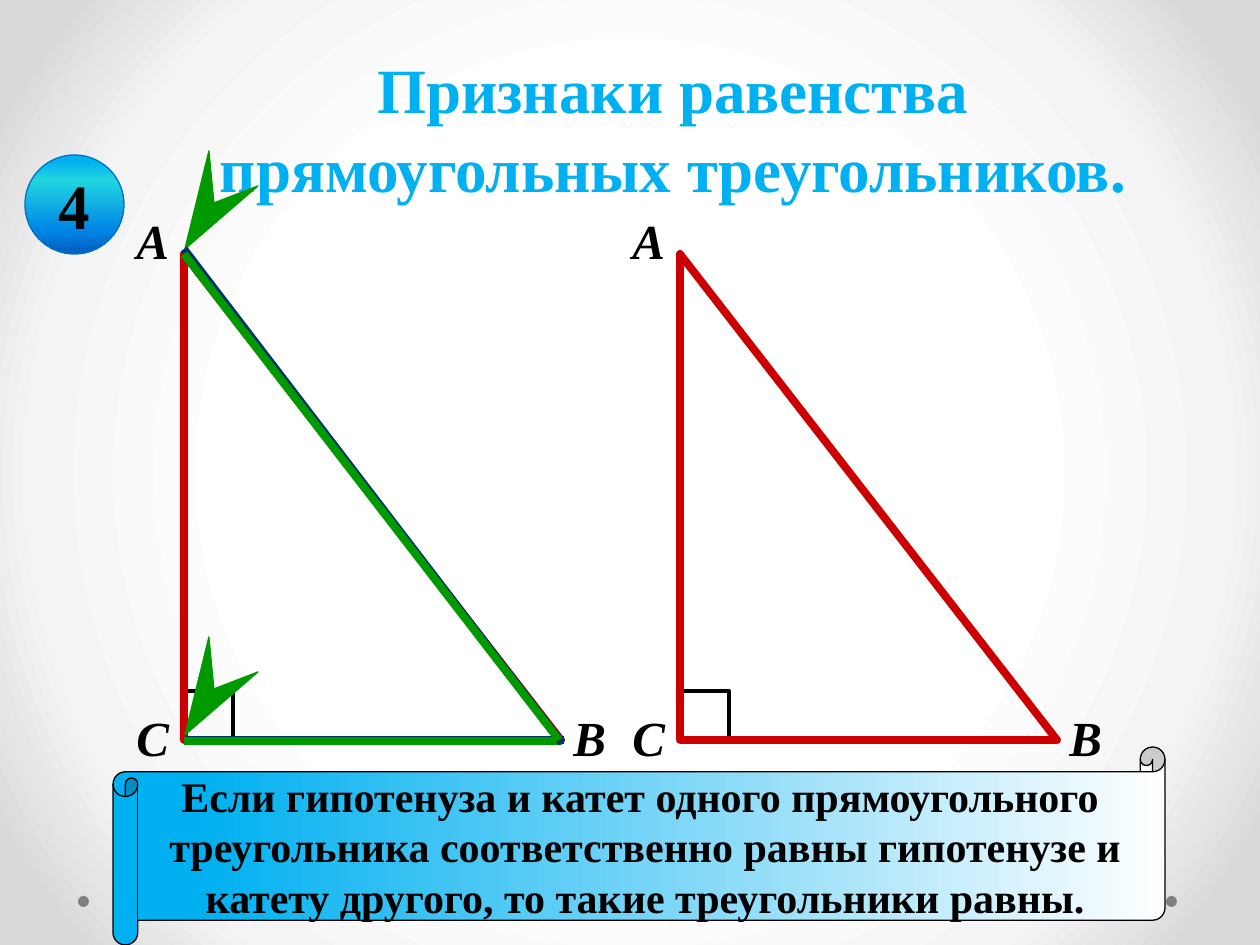
from dataclasses import dataclass
from typing import NamedTuple

from lxml.etree import SubElement
from pptx import Presentation
from pptx.dml.color import RGBColor
from pptx.enum.shapes import MSO_CONNECTOR, MSO_SHAPE as Preset
from pptx.enum.text import MSO_ANCHOR as Anchor, MSO_AUTO_SIZE as AutoSize, PP_ALIGN as Align
from pptx.oxml.ns import qn
from pptx.util import Emu, Pt

EMU_PER_PX = 914400 / 126


@dataclass(frozen=True)
class Theme:
    font: str = "Times New Roman"
    ink: str = "000000"
    title: str = "00B0F0"
    triangle: str = "CC0000"
    equal: str = "009900"
    under: str = "003366"
    badge_edge: str = "0070C0"
    dot: str = "808080"
    backdrop: tuple = ((50, "FFFFFF"), (76, "F4F4F4"), (92, "DADADA"))
    badge: tuple = ((6, "00B0F0"), (25, "21D6E0"), (75, "0087E6"), (100, "005CBF"))
    scroll: tuple = ((8, "00B0F0"), (100, "FFFFFF"))
    heading_size: int = 36
    label_size: int = 28
    rule_size: int = 24
    thin: float = 0.75
    corner: float = 2.5
    thick: float = 4.5


class Box(NamedTuple):
    left: int
    top: int
    width: int
    height: int


class Segment(NamedTuple):
    start: tuple[int, int]
    end: tuple[int, int]
    color: str


THEME = Theme()
SLIDE = Box(0, 0, 1260, 945)
TITLE = Box(147, 40, 1052, 110)
BADGE = Box(25, 155, 99, 99)
SCROLL = Box(113, 747, 1052, 198)
DOTS = [Box(left, 896, 11, 11) for left in (1166, 78)]
TRIANGLE_LEFTS = (184, 680)
TRIANGLE_TOP, TRIANGLE_WIDTH, TRIANGLE_HEIGHT = 254, 377, 486
CORNER_SIDE = 49
LABEL_OFFSETS = {"А": (-60, -50), "В": (377, 447), "С": (-60, 447)}
ARROW_TIPS = ((185, 249), (185, 735))
ARROW_OFFSETS = ((24, -98), (29, -46), (73, -63))
EQUAL_SIDES = (
    Segment((186, 740), (564, 740), THEME.under),
    Segment((184, 741), (562, 741), THEME.equal),
    Segment((562, 743), (184, 249), THEME.under),
    Segment((559, 740), (184, 254), THEME.equal),
)
TITLE_LINES = ("Признаки равенства", "прямоугольных треугольников.")
RULE_LINES = (
    "Если гипотенуза и катет одного прямоугольного ",
    "треугольника соответственно равны гипотенузе и",
    "катету другого, то такие треугольники равны.",
)


def px(value: float) -> Emu:
    return Emu(round(value * EMU_PER_PX))


def place(box: Box) -> list[Emu]:
    return [px(value) for value in box]


def rgb(color: str) -> RGBColor:
    return RGBColor.from_string(color)


def assign(target, values: dict) -> None:
    for name, value in values.items():
        setattr(target, name, value)


def set_gradient(fill, owner, stops: tuple, angle: int | None) -> None:
    """Write the stops into owner's gradient; without an angle it is circular."""
    fill.gradient()
    gradient = next(owner.iter(qn("a:gradFill")))
    for child in list(gradient):
        gradient.remove(child)
    stop_list = SubElement(gradient, qn("a:gsLst"))
    for percent, color in stops:
        stop = SubElement(stop_list, qn("a:gs"), pos=str(percent * 1000))
        SubElement(stop, qn("a:srgbClr"), val=color)
    if angle is None:
        circle = SubElement(gradient, qn("a:path"), path="circle")
        SubElement(circle, qn("a:fillToRect"), dict.fromkeys("ltrb", "50000"))
    else:
        SubElement(gradient, qn("a:lin"), ang=str(angle * 60000), scaled="0")


def write(frame, lines, size: int, color: str = THEME.ink, italic: bool = False,
          align=Align.CENTER, anchor=Anchor.MIDDLE, spacing: float = 1.0) -> None:
    assign(frame, {"word_wrap": False, "auto_size": AutoSize.NONE, "vertical_anchor": anchor})
    for index, line in enumerate(lines):
        paragraph = frame.add_paragraph() if index else frame.paragraphs[0]
        assign(paragraph, {"alignment": align, "line_spacing": spacing})
        run = paragraph.add_run()
        run.text = line
        assign(run.font, {"name": THEME.font, "size": Pt(size), "bold": True, "italic": italic})
        run.font.color.rgb = rgb(color)


def paint(shape, fill: str | None, line: str | None, width: float = THEME.thin) -> None:
    shape.shadow.inherit = False
    if fill:
        shape.fill.solid()
        shape.fill.fore_color.rgb = rgb(fill)
    else:
        shape.fill.background()
    if line:
        shape.line.color.rgb = rgb(line)
        shape.line.width = Pt(width)
    else:
        shape.line.fill.background()


def add_preset(slide, preset, box: Box, fill: str | None, line: str | None,
               width: float = THEME.thin):
    shape = slide.shapes.add_shape(preset, *place(box))
    paint(shape, fill, line, width)
    return shape


def add_triangle(slide, left: int) -> None:
    bottom = TRIANGLE_TOP + TRIANGLE_HEIGHT
    add_preset(slide, Preset.RECTANGLE,
               Box(left, bottom - CORNER_SIDE, CORNER_SIDE, CORNER_SIDE),
               None, THEME.ink, THEME.corner)
    add_preset(slide, Preset.RIGHT_TRIANGLE,
               Box(left, TRIANGLE_TOP, TRIANGLE_WIDTH, TRIANGLE_HEIGHT),
               None, THEME.triangle, THEME.thick)
    for vertex, (dx, dy) in LABEL_OFFSETS.items():
        label = slide.shapes.add_textbox(*place(Box(left + dx, TRIANGLE_TOP + dy, 58, 72)))
        write(label.text_frame, [vertex], THEME.label_size, italic=True,
              align=Align.LEFT, anchor=Anchor.TOP)


def add_arrow(slide, tip: tuple[int, int]) -> None:
    builder = slide.shapes.build_freeform(*tip, scale=EMU_PER_PX)
    builder.add_line_segments([(tip[0] + dx, tip[1] + dy) for dx, dy in ARROW_OFFSETS])
    paint(builder.convert_to_shape(), THEME.equal, THEME.equal)


def add_side(slide, side: Segment) -> None:
    ends = [px(value) for value in (*side.start, *side.end)]
    connector = slide.shapes.add_connector(MSO_CONNECTOR.STRAIGHT, *ends)
    connector.line.color.rgb = rgb(side.color)
    connector.line.width = Pt(THEME.thick)
    SubElement(connector.element.spPr, qn("a:effectLst"))


def add_panel(slide, preset, box: Box, stops: tuple, angle: int, edge: str, lines, size: int) -> None:
    panel = add_preset(slide, preset, box, None, edge)
    set_gradient(panel.fill, panel.element, stops, angle)
    write(panel.text_frame, lines, size)


def main() -> None:
    deck = Presentation()
    assign(deck, {"slide_width": px(SLIDE.width), "slide_height": px(SLIDE.height)})
    slide = deck.slides.add_slide(deck.slide_layouts[5])
    set_gradient(slide.background.fill, slide.element, THEME.backdrop, None)
    for dot in DOTS:
        add_preset(slide, Preset.OVAL, dot, THEME.dot, None)

    title = slide.shapes.title
    assign(title, dict(zip(("left", "top", "width", "height"), place(TITLE))))
    write(title.text_frame, TITLE_LINES, THEME.heading_size, THEME.title,
          anchor=Anchor.TOP, spacing=1.05)

    for left in TRIANGLE_LEFTS:
        add_triangle(slide, left)
    add_panel(slide, Preset.HORIZONTAL_SCROLL, SCROLL, THEME.scroll, 0, THEME.ink,
              RULE_LINES, THEME.rule_size)
    add_panel(slide, Preset.OVAL, BADGE, THEME.badge, 90, THEME.badge_edge,
              ["4"], THEME.heading_size)
    for tip in ARROW_TIPS:
        add_arrow(slide, tip)
    for side in EQUAL_SIDES:
        add_side(slide, side)
    deck.save("out.pptx")


if __name__ == "__main__":
    main()
